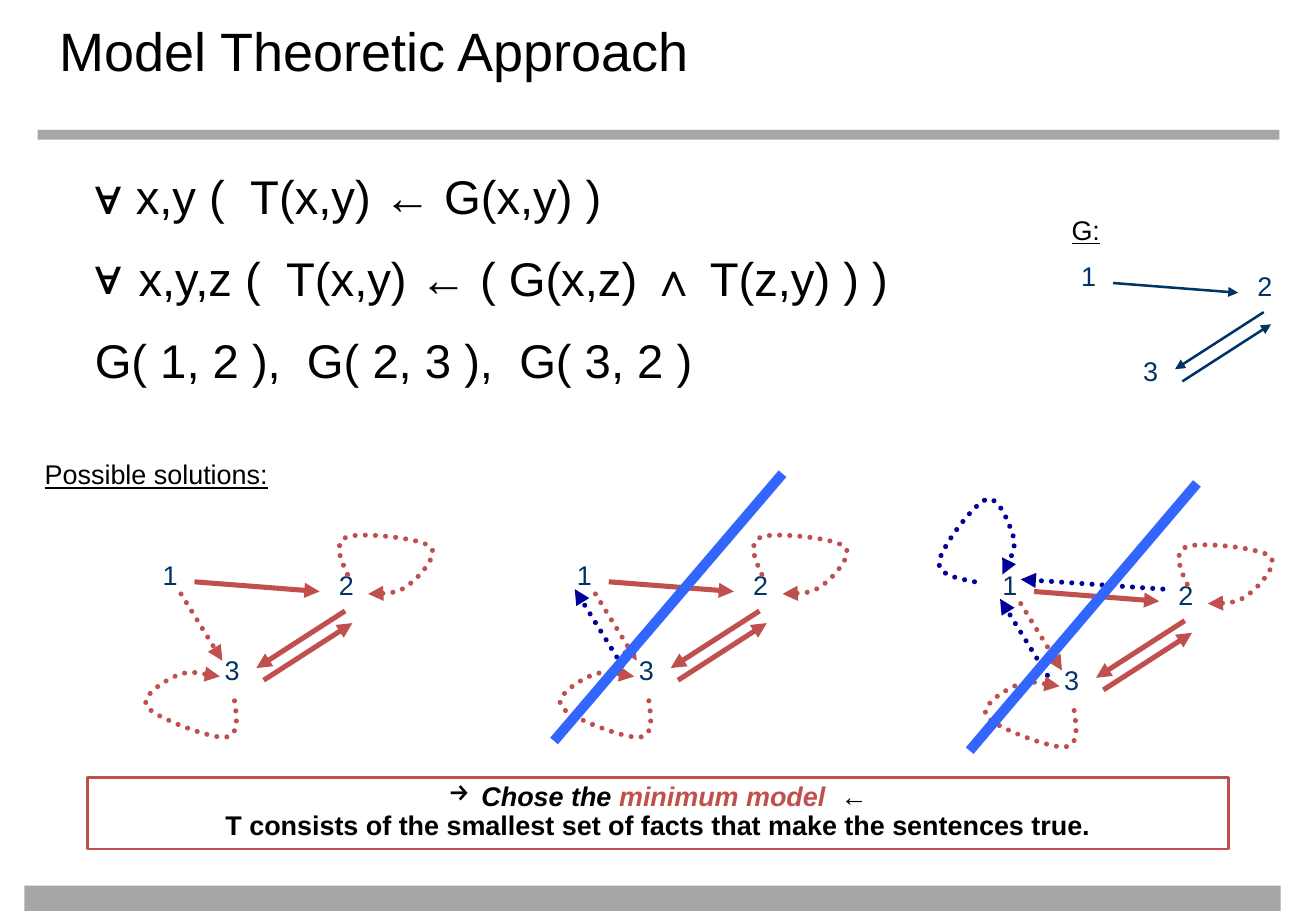
from dataclasses import dataclass

from lxml import etree
from pptx import Presentation
from pptx.dml.color import RGBColor
from pptx.enum.dml import MSO_LINE
from pptx.enum.shapes import MSO_CONNECTOR, MSO_SHAPE
from pptx.enum.text import MSO_ANCHOR, MSO_AUTO_SIZE, PP_ALIGN
from pptx.oxml.ns import qn
from pptx.util import Pt

STRAIGHT = MSO_CONNECTOR.STRAIGHT
RECTANGLE = MSO_SHAPE.RECTANGLE
DOTTED = MSO_LINE.ROUND_DOT
LEFT, CENTER = PP_ALIGN.LEFT, PP_ALIGN.CENTER
TOP = MSO_ANCHOR.TOP
FIXED = MSO_AUTO_SIZE.NONE
EMU_PER_PX = 9144

Point = tuple[int, int]


@dataclass(frozen=True)
class Theme:
    font: str = "Arial"
    title: int = 32
    body: int = 28
    label: int = 16
    ink: str = "000000"
    bar: str = "A6A6A6"
    node: str = "003366"
    derived: str = "C0504D"
    extra: str = "000099"
    strike: str = "3366FF"


@dataclass(frozen=True)
class Pen:
    color: str
    width: float
    dotted: bool = False
    arrow: bool = True


@dataclass(frozen=True)
class Edge:
    start: Point
    end: Point
    pen: Pen


@dataclass(frozen=True)
class Loop:
    points: tuple[Point, ...]
    pen: Pen


@dataclass(frozen=True)
class Graph:
    shift: Point
    edges: tuple[Edge, ...]
    loops: tuple[Loop, ...] = ()


THEME = Theme()
GIVEN = Pen(THEME.node, 1.5)
SOLID = Pen(THEME.derived, 3)
DERIVED = Pen(THEME.derived, 3, dotted=True)
EXTRA = Pen(THEME.extra, 3, dotted=True)
STRIKE = Pen(THEME.strike, 6, arrow=False)

NODES = {"1": (124, 458), "2": (269, 466), "3": (175, 536)}
FACT_LINES = (((160, 479), (263, 487)), ((284, 503), (211, 550)), ((217, 560), (290, 513)))
FACTS = tuple(Edge(start, end, SOLID) for start, end in FACT_LINES)
GIVEN_FACTS = tuple(Edge(start, end, GIVEN) for start, end in FACT_LINES)
MINIMUM = FACTS + (Edge((149, 489), (183, 544), DERIVED),)
THREE_TO_ONE = Edge((171, 548), (132, 485), EXTRA)
TWO_TO_ONE = Edge((266, 477), (149, 469), EXTRA)
LOOPS = (
    Loop(((286, 473), (280, 460), (274, 446), (286, 442), (297, 438), (346, 443), (354, 450),
          (362, 456), (345, 475), (337, 481), (328, 488), (316, 489), (303, 489)), DERIVED),
    Loop(((193, 577), (195, 592), (197, 606), (185, 607), (173, 608), (128, 591), (121, 582),
          (115, 573), (136, 560), (146, 556), (156, 552), (168, 555), (181, 557)), DERIVED),
)
ONE_LOOP = Loop(((111, 471), (96, 468), (80, 465), (82, 454), (84, 442), (111, 406), (121, 403),
                 (131, 400), (140, 424), (143, 434), (145, 444), (139, 455), (134, 465)), EXTRA)
GRAPHS = (
    Graph((0, 0), MINIMUM, LOOPS),
    Graph((341, 0), MINIMUM + (THREE_TO_ONE,), LOOPS),
    Graph((691, 8), MINIMUM + (THREE_TO_ONE, TWO_TO_ONE), LOOPS + (ONE_LOOP,)),
    Graph((756, -246), GIVEN_FACTS),
)
STRIKES = (Edge((456, 610), (644, 390), STRIKE), Edge((798, 618), (985, 398), STRIKE))
BARS = ((20, 729, 1034, 21), (31, 107, 1022, 8))
RULES = (
    ("∀ x,y (  T(x,y) ← G(x,y) )", ""),
    ("x,y,z (  T(x,y) ← ( G(x,z) ∧ T(z,y) ) )", "∀"),
    ("G( 1, 2 ),  G( 2, 3 ),  G( 3, 2 )", ""),
)


def px(value: int) -> int:
    return value * EMU_PER_PX


def place(shape, left: int, top: int, width: int, height: int) -> None:
    shape.left, shape.top = px(left), px(top)
    shape.width, shape.height = px(width), px(height)


def set_font(font, size: int, color: str, bold: bool = False) -> None:
    font.name, font.size, font.bold = THEME.font, Pt(size), bold
    font.color.rgb = RGBColor.from_string(color)


def set_bullet(para, bullet: str, margin: int, indent: int) -> None:
    properties = para._p.get_or_add_pPr()
    properties.set("marL", str(px(margin)))
    properties.set("indent", str(px(indent)))
    if bullet:
        etree.SubElement(properties, qn("a:buChar")).set("char", bullet)
    else:
        etree.SubElement(properties, qn("a:buNone"))


def apply_pen(shape, pen: Pen) -> None:
    shape.line.color.rgb = RGBColor.from_string(pen.color)
    shape.line.width = Pt(pen.width)
    if pen.dotted:
        shape.line.dash_style = DOTTED
    outline = shape._element.spPr.find(qn("a:ln"))
    if pen.dotted:
        outline.set("cap", "rnd")
    if pen.arrow:
        etree.SubElement(outline, qn("a:tailEnd")).set("type", "triangle")


def draw_edge(page, edge: Edge, shift: Point = (0, 0)) -> None:
    ends = [px(value + offset) for point in (edge.start, edge.end)
            for value, offset in zip(point, shift)]
    line = page.shapes.add_connector(STRAIGHT, *ends)
    apply_pen(line, edge.pen)
    etree.SubElement(line._element.spPr, qn("a:effectLst"))


def draw_loop(page, loop: Loop, shift: Point) -> None:
    start, *rest = [(px(x + shift[0]), px(y + shift[1])) for x, y in loop.points]
    builder = page.shapes.build_freeform(*start)
    builder.add_line_segments(rest, close=False)
    curve = builder.convert_to_shape()
    curve.shadow.inherit = False
    curve.fill.background()
    outline = curve._element.xpath(".//a:path")[0]
    segments = outline.findall(qn("a:lnTo"))
    for first in range(0, len(segments), 3):
        bezier = etree.SubElement(outline, qn("a:cubicBezTo"))
        for segment in segments[first:first + 3]:
            bezier.append(segment[0])
            outline.remove(segment)
    apply_pen(curve, loop.pen)


def draw_label(page, text: str, left: int, top: int, width: int, color: str,
               underline: bool = False) -> None:
    box = page.shapes.add_textbox(px(left), px(top), px(width), px(35))
    box.text_frame.word_wrap = False
    para = box.text_frame.paragraphs[0]
    para.text, para.line_spacing = text, 0.9
    set_font(para.font, THEME.label, color)
    para.font.underline = underline


def draw_graph(page, graph: Graph) -> None:
    for name, (left, top) in NODES.items():
        draw_label(page, name, left + graph.shift[0], top + graph.shift[1], 33, THEME.node)
    for edge in graph.edges:
        draw_edge(page, edge, graph.shift)
    for loop in graph.loops:
        draw_loop(page, loop, graph.shift)


def draw_rectangle(page, left: int, top: int, width: int, height: int):
    shape = page.shapes.add_shape(RECTANGLE, px(left), px(top), px(width), px(height))
    shape.shadow.inherit = False
    return shape


def fill_title(title) -> None:
    place(title, 42, 17, 1000, 56)
    frame = title.text_frame
    frame.auto_size, frame.vertical_anchor = FIXED, TOP
    frame.margin_left = frame.margin_right = px(7)
    frame.margin_top = frame.margin_bottom = px(3)
    para = frame.paragraphs[0]
    para.text, para.alignment, para.line_spacing = "Model Theoretic Approach", LEFT, 0.92
    set_font(para.font, THEME.title, THEME.ink)


def fill_rules(body) -> None:
    place(body, 42, 133, 1000, 542)
    frame = body.text_frame
    frame.auto_size, frame.vertical_anchor = FIXED, TOP
    for index, (text, bullet) in enumerate(RULES):
        para = frame.add_paragraph() if index else frame.paragraphs[0]
        para.text = text
        set_bullet(para, bullet, 62 if bullet else 51, -36 if bullet else -25)
        para.space_before = Pt(15 if index else 0)
        set_font(para.font, THEME.body, THEME.ink)


def draw_conclusion(page) -> None:
    box = draw_rectangle(page, 72, 640, 939, 59)
    box.fill.background()
    apply_pen(box, Pen(THEME.derived, 1.5, arrow=False))
    frame = box.text_frame
    frame.word_wrap, frame.vertical_anchor = True, TOP
    choice, meaning = frame.paragraphs[0], frame.add_paragraph()
    set_bullet(choice, "→", 27, -27)
    for text, color, italic in (("Chose the ", THEME.ink, True),
                                ("minimum model ", THEME.derived, True),
                                (" ←", THEME.ink, False)):
        span = choice.add_run()
        span.text = text
        set_font(span.font, THEME.label, color, bold=True)
        span.font.italic = italic
    meaning.text = "T consists of the smallest set of facts that make the sentences true."
    for para in (choice, meaning):
        para.alignment, para.line_spacing = CENTER, 0.9
        set_font(para.font, THEME.label, THEME.ink, bold=True)


def main() -> None:
    deck = Presentation()
    deck.slide_width, deck.slide_height = px(1083), px(750)
    page = deck.slides.add_slide(deck.slide_layouts[1])
    for bar in BARS:
        shape = draw_rectangle(page, *bar)
        shape.fill.solid()
        shape.fill.fore_color.rgb = RGBColor.from_string(THEME.bar)
        shape.line.fill.background()
    fill_title(page.shapes.title)
    fill_rules(page.placeholders[1])
    draw_label(page, "Possible solutions:", 27, 375, 206, THEME.ink, underline=True)
    draw_label(page, "G:", 872, 174, 44, THEME.ink, underline=True)
    for graph in GRAPHS:
        draw_graph(page, graph)
    draw_conclusion(page)
    for strike in STRIKES:
        draw_edge(page, strike)
    deck.save("out.pptx")


if __name__ == "__main__":
    main()
